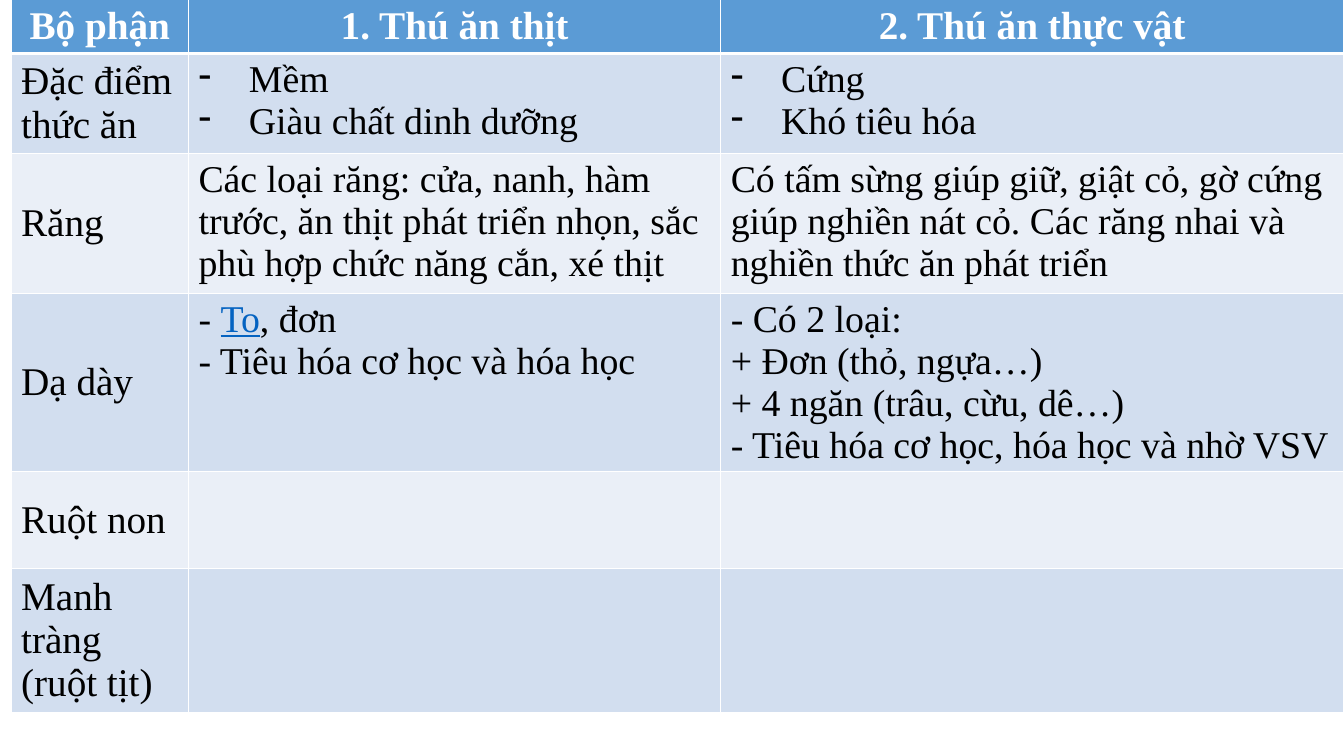
from dataclasses import dataclass

import lxml.etree
import pptx
import pptx.dml.color
import pptx.enum.text
import pptx.oxml.ns
import pptx.util

Pt = pptx.util.Pt
ANCHOR = pptx.enum.text.MSO_ANCHOR
ALIGN = pptx.enum.text.PP_ALIGN

FONT = "Times New Roman"
WHITE, BLACK, LINK_BLUE = "FFFFFF", "000000", "0563C1"
HEADER_FILL, BAND_FILLS = "5B9BD5", ("D2DEEF", "EAEFF7")
LABEL_SIZE, DETAIL_SIZE = 28, 27
BULLET_INDENT = 36
COLUMN_WIDTHS = (126.72, 380.16, 444.96)
TABLE_LEFT, TABLE_TOP = 7.92, -0.72


@dataclass(frozen=True)
class Span:
    text: str
    link: bool = False


@dataclass(frozen=True)
class Line:
    spans: tuple[Span, ...]
    bullet: bool = False


@dataclass(frozen=True)
class Row:
    height: float
    label: str
    carnivore: tuple[Line, ...] = ()
    herbivore: tuple[Line, ...] = ()


def lines(*texts: str, bullet: bool = False) -> tuple[Line, ...]:
    return tuple(Line((Span(text),), bullet) for text in texts)


HEADER = Row(38.9, "Bộ phận", lines("1. Thú ăn thịt"), lines("2. Thú ăn thực vật"))
ORGANS = (
    Row(71.3, "Đặc điểm thức ăn",
        lines("Mềm", "Giàu chất dinh dưỡng", bullet=True),
        lines("Cứng", "Khó tiêu hóa", bullet=True)),
    Row(100.1, "Răng",
        lines("Các loại răng: cửa, nanh, hàm trước, ăn thịt phát triển nhọn, "
              "sắc phù hợp chức năng cắn, xé thịt"),
        lines("Có tấm sừng giúp giữ, giật cỏ, gờ cứng giúp nghiền nát cỏ. "
              "Các răng nhai và nghiền thức ăn phát triển")),
    Row(122.4, "Dạ dày",
        (Line((Span("- "), Span("To", link=True), Span(", đơn"))),
         *lines("- Tiêu hóa cơ học và hóa học")),
        lines("- Có 2 loại:", "+ Đơn (thỏ, ngựa…)", "+ 4 ngăn (trâu, cừu, dê…)",
              "- Tiêu hóa cơ học, hóa học và nhờ VSV")),
    Row(69.1, "Ruột non"),
    Row(103, "Manh tràng (ruột tịt)"),
)


def color(value: str) -> pptx.dml.color.RGBColor:
    return pptx.dml.color.RGBColor.from_string(value)


def add_element(parent, tag: str, **attributes: str):
    element = lxml.etree.SubElement(parent, pptx.oxml.ns.qn(tag))
    for name, value in attributes.items():
        element.set(name, value)
    return element


def add_borders(cell, top: float, bottom: float) -> None:
    """Draw white cell borders; must run before the cell gets its fill."""
    properties = cell._tc.get_or_add_tcPr()
    for side, width in {"L": 1, "R": 1, "T": top, "B": bottom}.items():
        border = add_element(properties, f"a:ln{side}", w=str(Pt(width)))
        fill = add_element(border, "a:solidFill")
        add_element(fill, "a:srgbClr", val=WHITE)


def add_bullet(para) -> None:
    properties = para._p.get_or_add_pPr()
    properties.set("marL", str(Pt(BULLET_INDENT)))
    properties.set("indent", str(Pt(-BULLET_INDENT)))
    add_element(properties, "a:buFontTx")
    add_element(properties, "a:buChar", char="-")


def write_cell(cell, content: tuple[Line, ...], size: float,
               text_color: str, bold: bool, align) -> None:
    for index, line in enumerate(content):
        frame = cell.text_frame
        para = frame.add_paragraph() if index else frame.paragraphs[0]
        para.alignment = align
        if line.bullet:
            add_bullet(para)
        for span in line.spans:
            run = para.add_run()
            run.text = span.text
            formats = {"name": FONT, "size": Pt(size), "bold": bold, "underline": span.link}
            for name, value in formats.items():
                setattr(run.font, name, value)
            run.font.color.rgb = color(LINK_BLUE if span.link else text_color)


def fill_row(table, index: int, row: Row) -> None:
    header = index == 0
    table.rows[index].height = Pt(row.height)
    fill = HEADER_FILL if header else BAND_FILLS[(index - 1) % 2]
    for column, content in enumerate((lines(row.label), row.carnivore, row.herbivore)):
        cell = table.cell(index, column)
        heading = header or column == 0
        add_borders(cell, top=3 if index == 1 else 1, bottom=3 if header else 1)
        cell.fill.solid()
        cell.fill.fore_color.rgb = color(fill)
        cell.vertical_anchor = ANCHOR.MIDDLE if heading else ANCHOR.TOP
        write_cell(cell, content, LABEL_SIZE if heading else DETAIL_SIZE,
                   WHITE if header else BLACK, header,
                   ALIGN.CENTER if header else ALIGN.LEFT)


def main() -> None:
    deck = pptx.Presentation()
    deck.slide_width, deck.slide_height = Pt(960), Pt(540)
    page = deck.slides.add_slide(deck.slide_layouts[6])
    rows = (HEADER, *ORGANS)
    table = page.shapes.add_table(
        len(rows), len(COLUMN_WIDTHS), Pt(TABLE_LEFT), Pt(TABLE_TOP),
        Pt(sum(COLUMN_WIDTHS)), Pt(sum(row.height for row in rows))).table
    for column, width in zip(table.columns, COLUMN_WIDTHS):
        column.width = Pt(width)
    for index, row in enumerate(rows):
        fill_row(table, index, row)
    deck.save("out.pptx")


if __name__ == "__main__":
    main()
